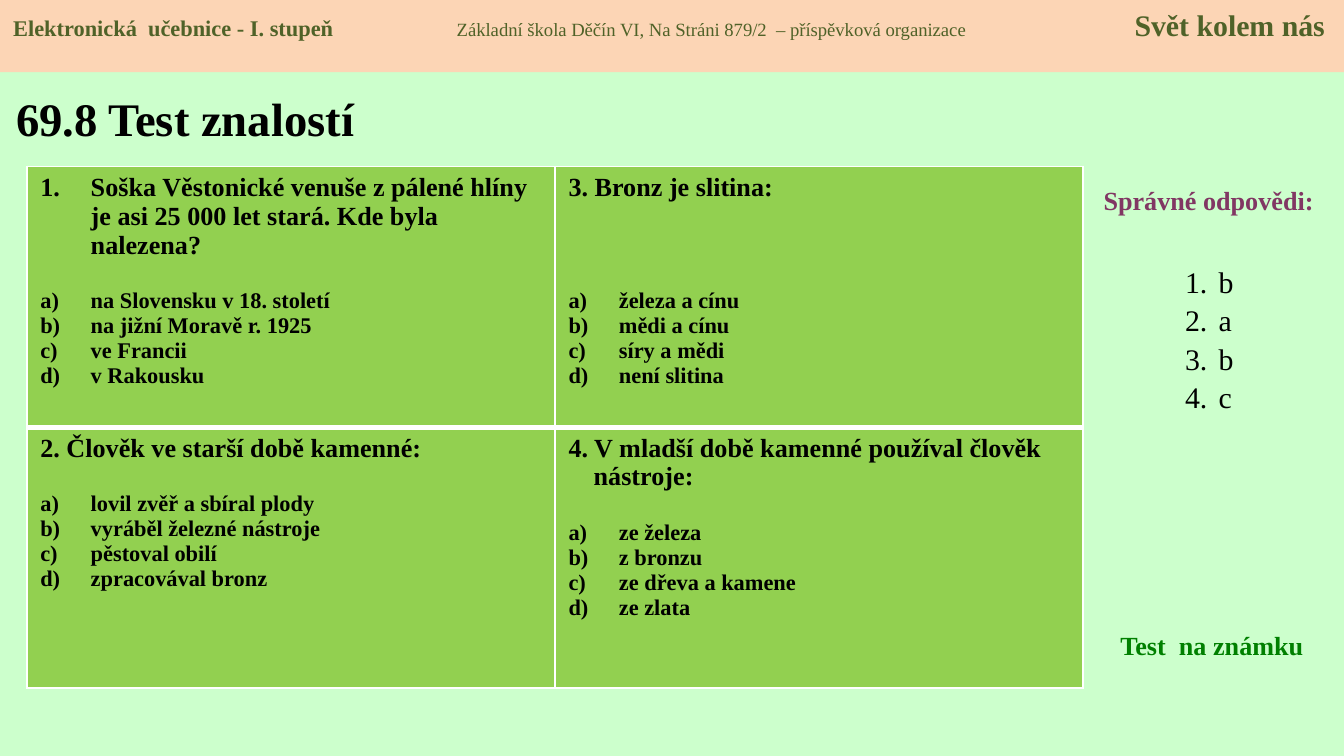
import dataclasses

import lxml.etree
import pptx
import pptx.dml.color
import pptx.enum.shapes
import pptx.enum.text
import pptx.oxml.ns
import pptx.util

UNIT = pptx.util.Inches(10) // 160
COLUMNS, ROWS = 160, 90
ALIGN = pptx.enum.text.PP_ALIGN
ANCHOR = pptx.enum.text.MSO_ANCHOR


@dataclasses.dataclass(frozen=True)
class Theme:
    """Colours, font and type sizes of the slide."""
    font: str = "Times New Roman"
    page: str = "CCFFCC"
    band: str = "FCD5B5"
    band_text: str = "4F6228"
    cell: str = "92D050"
    border: str = "FFFFFF"
    text: str = "000000"
    heading: str = "813763"
    grade: str = "008000"
    title: int = 25
    large: int = 16
    question: int = 14
    option: int = 12
    small: int = 10
    question_line: float = 15.5


THEME = Theme()

QUESTIONS = [
    [("Soška Věstonické venuše z pálené hlíny je asi 25 000 let stará. Kde byla nalezena?",
      6, "arabicPeriod", 1,
      ["na Slovensku v 18. století", "na jižní Moravě r. 1925", "ve Francii", "v Rakousku"]),
     ("3. Bronz je slitina:", 3, None, 3,
      ["železa a cínu", "mědi a cínu", "síry a mědi", "není slitina"])],
    [("2. Člověk ve starší době kamenné:", 3, None, 1,
      ["lovil zvěř a sbíral plody", "vyráběl železné nástroje", "pěstoval obilí",
       "zpracovával bronz"]),
     ("4. V mladší době kamenné používal člověk nástroje:", 3, None, 1,
      ["ze železa", "z bronzu", "ze dřeva a kamene", "ze zlata"])],
]


def grid(*box):
    """Turn grid columns and rows into slide lengths."""
    return [round(v * UNIT) for v in box]


def rgb(color):
    """Return a colour object for a hex string."""
    return pptx.dml.color.RGBColor.from_string(color)


def add_xml(parent, tag, **attributes):
    """Append a DrawingML element to a parent."""
    return lxml.etree.SubElement(parent, pptx.oxml.ns.qn(tag), attributes)


def style(r, size, color, bold=False):
    """Format one run."""
    r.font.name = THEME.font
    r.font.size = pptx.util.Pt(size)
    r.font.bold = bold
    r.font.color.rgb = rgb(color)


def hang(p, indent, numbering=None):
    """Give a paragraph a hanging indent and optional automatic numbering."""
    pPr = p._p.get_or_add_pPr()
    pPr.set("marL", str(indent * UNIT))
    pPr.set("indent", str(-indent * UNIT))
    if numbering:
        add_xml(pPr, "a:buFont", typeface=THEME.font)
        add_xml(pPr, "a:buAutoNum", type=numbering)


def add_header(s, box):
    """Draw the top band with its three texts on tab stops."""
    sp = s.shapes.add_shape(pptx.enum.shapes.MSO_SHAPE.RECTANGLE, *grid(*box))
    sp.shadow.inherit = False
    sp.fill.solid()
    sp.fill.fore_color.rgb = rgb(THEME.band)
    sp.line.fill.background()
    tf = sp.text_frame
    tf.word_wrap = True
    tf.vertical_anchor = ANCHOR.TOP
    p = tf.paragraphs[0]
    p.alignment = ALIGN.LEFT
    tabs = add_xml(p._p.get_or_add_pPr(), "a:tabLst")
    for share, kind in ((0.33, "l"), (0.976, "r")):
        add_xml(tabs, "a:tab", pos=str(round(share * box[2] * UNIT)), algn=kind)
    for text, size, bold in (
        ("Elektronická  učebnice - I. stupeň\t", THEME.option, True),
        ("Základní škola Děčín VI, Na Stráni 879/2  – příspěvková organizace\t",
         THEME.small, False),
        ("Svět kolem nás", THEME.large, True),
    ):
        r = p.add_run()
        r.text = text
        style(r, size, THEME.band_text, bold)


def add_title(s, box, text):
    """Place and format the title placeholder."""
    sp = s.shapes.title
    sp.left, sp.top, sp.width, sp.height = grid(*box)
    tf = sp.text_frame
    tf.text = text
    tf.auto_size = pptx.enum.text.MSO_AUTO_SIZE.NONE
    tf.vertical_anchor = ANCHOR.MIDDLE
    p = tf.paragraphs[0]
    p.alignment = ALIGN.LEFT
    style(p.runs[0], THEME.title, THEME.text, True)


def set_borders(cell, bottom):
    """Draw the four borders of a cell."""
    tcPr = cell._tc.get_or_add_tcPr()
    for side, width in (("L", 1), ("R", 1), ("T", 1), ("B", bottom)):
        ln = add_xml(tcPr, f"a:ln{side}", w=str(pptx.util.Pt(width)))
        add_xml(add_xml(ln, "a:solidFill"), "a:srgbClr", val=THEME.border)


def fill_question(cell, question, indent, numbering, gap, options):
    """Write a question and its lettered options into a cell."""
    tf = cell.text_frame
    tf.text = "\n".join([question, *options])
    head, *choices = tf.paragraphs
    hang(head, indent, numbering)
    style(head.runs[0], THEME.question, THEME.text, True)
    for p in choices:
        hang(p, 6, "alphaLcParenR")
        style(p.runs[0], THEME.option, THEME.text, True)
    choices[0].space_before = pptx.util.Pt(gap * THEME.question_line)


def add_questions(s, box, questions):
    """Draw the table of test questions in equal cells."""
    rows, columns = len(questions), len(questions[0])
    table = s.shapes.add_table(rows, columns, *grid(*box)).table
    for column in table.columns:
        column.width = round(box[2] * UNIT / columns)
    for i, row in enumerate(questions):
        table.rows[i].height = round(box[3] * UNIT / rows)
        for j, question in enumerate(row):
            cell = table.cell(i, j)
            set_borders(cell, 3 if i == 0 else 1)
            cell.fill.solid()
            cell.fill.fore_color.rgb = rgb(THEME.cell)
            fill_question(cell, *question)


def add_text(s, box, text, size, color, bold=False, align=ALIGN.LEFT):
    """Add a text box and return its text frame."""
    tf = s.shapes.add_textbox(*grid(*box)).text_frame
    tf.word_wrap = True
    tf.text = text
    for p in tf.paragraphs:
        p.alignment = align
        style(p.runs[0], size, color, bold)
    return tf


def add_answers(s, box, answers):
    """List the numbered correct answers."""
    tf = add_text(s, box, "\n".join(answers), THEME.large, THEME.text)
    tf.margin_top, tf.margin_right = 5 * UNIT, 0
    for i, p in enumerate(tf.paragraphs):
        hang(p, 4, "arabicPeriod")
        if i:
            p.space_before = pptx.util.Pt(1.4)


def main():
    """Build the slide and save it."""
    prs = pptx.Presentation()
    prs.slide_width, prs.slide_height = grid(COLUMNS, ROWS)
    s = prs.slides.add_slide(prs.slide_layouts[5])
    s.background.fill.solid()
    s.background.fill.fore_color.rgb = rgb(THEME.page)
    add_title(s, (0.32, 8.8, 51, 10.4), "69.8 Test znalostí")
    add_text(s, (128.8, 21.1, 30.2, 5.4), "Správné odpovědi:",
             THEME.question, THEME.heading, True, ALIGN.CENTER)
    add_questions(s, (3.2, 19.8, 125.76, 62.1), QUESTIONS)
    add_answers(s, (139.5, 26.4, 8.8, 31.8), ["b", "a", "b", "c"])
    tf = add_text(s, (131.8, 74.1, 25.1, 5.4), "Test  na známku",
                  THEME.question, THEME.grade, True)
    tf.margin_right = 0
    add_header(s, (0, 0, COLUMNS, 8.6))
    prs.save("out.pptx")


if __name__ == "__main__":
    main()
